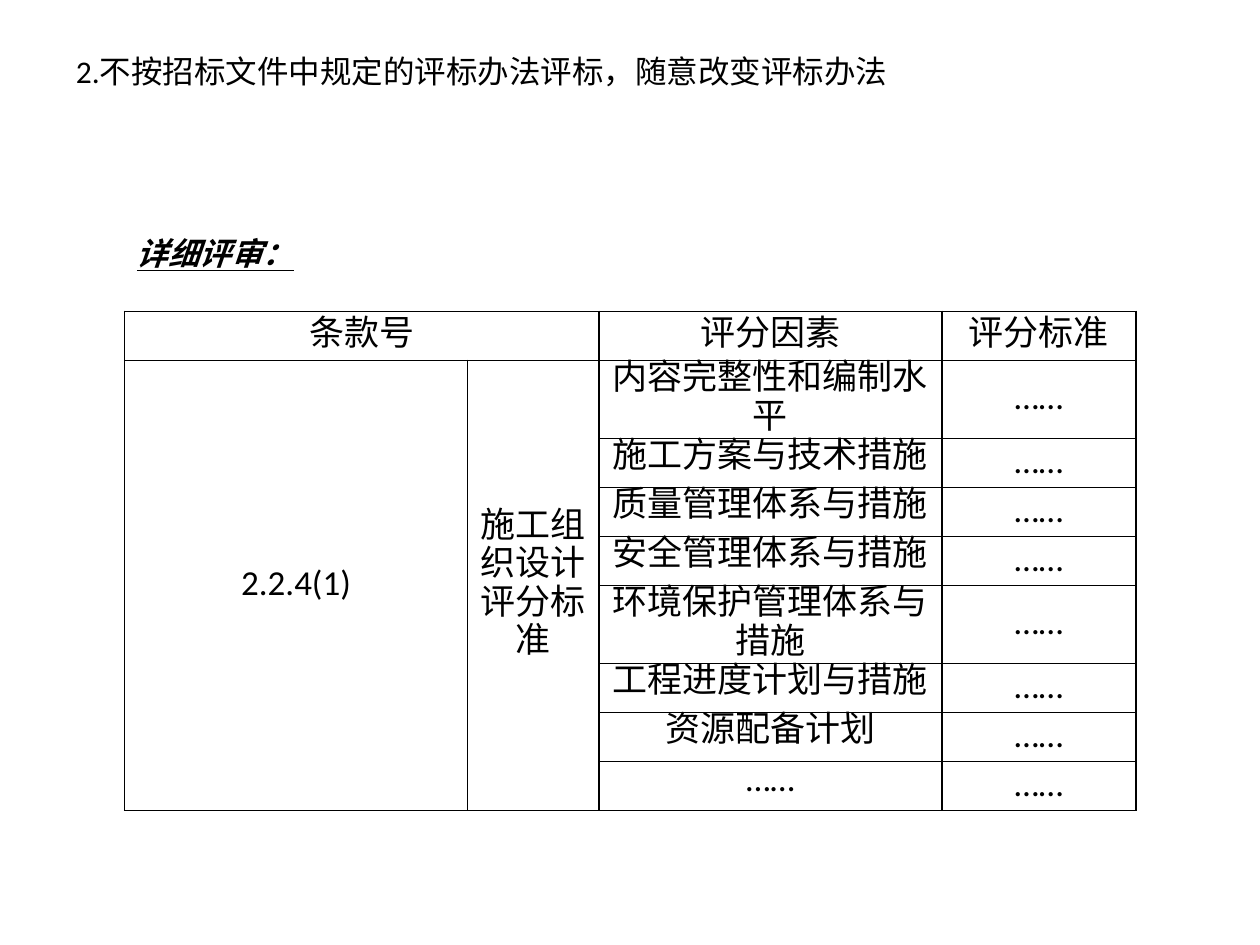
from lxml.etree import SubElement
from pptx import Presentation
from pptx.dml.color import RGBColor
from pptx.enum.text import MSO_ANCHOR, MSO_AUTO_SIZE, PP_ALIGN
from pptx.oxml.ns import qn
from pptx.util import Pt

COLOURS = {"ink": "000000"}
LATIN, CHINESE = "Calibri", "Noto Sans CJK SC"

TITLE = "2.不按招标文件中规定的评标办法评标，随意改变评标办法"
HEADING = "详细评审："
HEADERS = ["条款号", "", "评分因素", "评分标准"]
CLAUSE = "2.2.4(1)"
SECTION = "施工组织设计评分标准"
FACTORS = [
    "内容完整性和编制水平",
    "施工方案与技术措施",
    "质量管理体系与措施",
    "安全管理体系与措施",
    "环境保护管理体系与措施",
    "工程进度计划与措施",
    "资源配备计划",
    "……",
]
STANDARD = "……"
COLUMN_WIDTHS = [196, 75, 196, 111]
ROW_HEIGHT = 28


def write(frame, text, size=18, font=LATIN, align=PP_ALIGN.CENTER,
          anchor=MSO_ANCHOR.MIDDLE, emphasis=None, spacing=None, after=None):
    frame.vertical_anchor = anchor
    para = frame.paragraphs[0]
    para.alignment = align
    para.line_spacing = spacing
    para.space_after = after
    span = para.add_run()
    span.text = text
    span.font.size = Pt(size)
    span.font.name = font
    span.font.bold = span.font.italic = span.font.underline = emphasis
    span.font.color.rgb = RGBColor.from_string(COLOURS["ink"])
    properties = span.font._element
    SubElement(properties, qn("a:ea"), typeface=CHINESE)


def add_borders(cell):
    properties = cell._tc.get_or_add_tcPr()
    for side in ("lnL", "lnR", "lnT", "lnB"):
        line = SubElement(properties, qn(f"a:{side}"), w=str(Pt(1)))
        fill = SubElement(line, qn("a:solidFill"))
        SubElement(fill, qn("a:srgbClr"), val=COLOURS["ink"])


def add_score_table(page):
    rows = [HEADERS] + [["", "", factor, STANDARD] for factor in FACTORS]
    rows[1][:2] = [CLAUSE, SECTION]
    table = page.shapes.add_table(
        len(rows), len(COLUMN_WIDTHS), Pt(71.2), Pt(178),
        Pt(sum(COLUMN_WIDTHS)), Pt(ROW_HEIGHT * len(rows))).table
    for column, width in zip(table.columns, COLUMN_WIDTHS):
        column.width = Pt(width)
    for r, texts in enumerate(rows):
        table.rows[r].height = Pt(ROW_HEIGHT)
        for c, text in enumerate(texts):
            cell = table.cell(r, c)
            cell.margin_left = cell.margin_right = Pt(5)
            cell.margin_top, cell.margin_bottom = Pt(0.6), 0
            add_borders(cell)
            cell.fill.background()
            if text:
                top = r > 0 and c == 2
                cell.vertical_anchor = MSO_ANCHOR.TOP if top else MSO_ANCHOR.MIDDLE
                write(cell.text_frame, text, size=20, anchor=None, spacing=Pt(22))
    table.cell(0, 0).merge(table.cell(0, 1))
    for c in (0, 1):
        table.cell(1, c).merge(table.cell(len(FACTORS), c))


def add_text(page, text, left, top, width, height, wrap=True, **style):
    box = page.shapes.add_textbox(Pt(left), Pt(top), Pt(width), Pt(height))
    frame = box.text_frame
    frame.word_wrap = wrap
    frame.auto_size = MSO_AUTO_SIZE.NONE if wrap else MSO_AUTO_SIZE.SHAPE_TO_FIT_TEXT
    write(frame, text, **style)


def main():
    deck = Presentation()
    deck.slide_width, deck.slide_height = Pt(720), Pt(540)
    page = deck.slides.add_slide(deck.slide_layouts[6])
    add_score_table(page)
    add_text(page, HEADING, 71.2, 130.3, 105, 29, wrap=False, font=CHINESE,
             align=PP_ALIGN.JUSTIFY, anchor=MSO_ANCHOR.TOP, emphasis=True, after=Pt(3))
    add_text(page, TITLE, 25.2, 26, 500, 29)
    deck.save("out.pptx")


if __name__ == "__main__":
    main()
